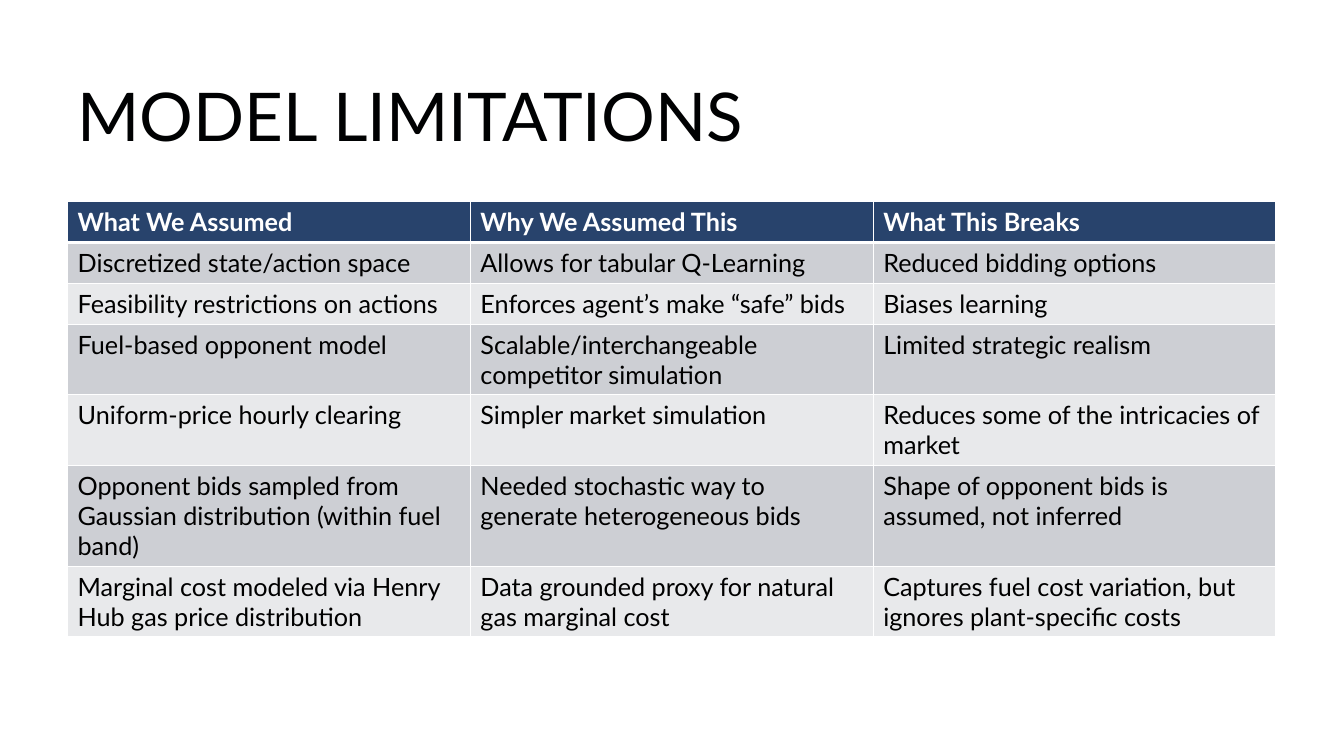
"""Build the model limitations slide with its table of assumptions."""
from dataclasses import dataclass

from lxml import etree
from pptx import Presentation
from pptx import util as u
from pptx.dml import color
from pptx.enum import text
from pptx.oxml import ns

FONT = "Lato"
WHITE, BLACK, NAVY = "FFFFFF", "000000", "28436C"
BANDS = ("CDCFD4", "E8E9EB")
LEFT, WIDTH = 48.24, 863.28
TITLE_TOP, TITLE_HEIGHT, TABLE_TOP = 54, 59.76, 144
LINE_HEIGHTS = {1: 29.2, 2: 50.4, 3: 72}


@dataclass
class Row:
    assumed: str
    why: str
    breaks: str
    lines: int = 1

    def cells(self) -> tuple[str, str, str]:
        return self.assumed, self.why, self.breaks


ROWS = [
    Row("What We Assumed", "Why We Assumed This", "What This Breaks"),
    Row("Discretized state/action space", "Allows for tabular Q-Learning",
        "Reduced bidding options"),
    Row("Feasibility restrictions on actions",
        "Enforces agent’s make “safe” bids", "Biases learning"),
    Row("Fuel-based opponent model",
        "Scalable/interchangeable competitor simulation",
        "Limited strategic realism", 2),
    Row("Uniform-price hourly clearing", "Simpler market simulation",
        "Reduces some of the intricacies of market", 2),
    Row("Opponent bids sampled from Gaussian distribution (within fuel band)",
        "Needed stochastic way to generate heterogeneous bids",
        "Shape of opponent bids is assumed, not inferred", 3),
    Row("Marginal cost modeled via Henry Hub gas price distribution",
        "Data grounded proxy for natural gas marginal cost",
        "Captures fuel cost variation, but ignores plant-specific costs", 2),
]


def rgb(value: str) -> color.RGBColor:
    return color.RGBColor.from_string(value)


def write(tf, content: str, *, size: float = 18, fill: str = BLACK,
          bold: bool = False, spacing: float | None = None) -> None:
    p = tf.paragraphs[0]
    p.line_spacing = spacing
    r = p.add_run()
    r.text = content
    r.font.name = FONT
    r.font.size = u.Pt(size)
    r.font.bold = bold
    r.font.color.rgb = rgb(fill)


def add_borders(cell, top: float, bottom: float) -> None:
    props = cell._tc.get_or_add_tcPr()
    for i, (side, width) in enumerate(
            (("L", 1), ("R", 1), ("T", top), ("B", bottom))):
        ln = etree.Element(ns.qn(f"a:ln{side}"), w=str(u.Pt(width)))
        solid = etree.SubElement(ln, ns.qn("a:solidFill"))
        etree.SubElement(solid, ns.qn("a:srgbClr"), val=WHITE)
        props.insert(i, ln)


def add_title(s) -> None:
    sp = s.shapes.add_textbox(u.Pt(LEFT), u.Pt(TITLE_TOP),
                              u.Pt(WIDTH), u.Pt(TITLE_HEIGHT))
    tf = sp.text_frame
    tf.word_wrap = True
    tf.vertical_anchor = text.MSO_ANCHOR.BOTTOM
    write(tf, "MODEL LIMITATIONS", size=48, fill="000102", spacing=0.8)


def add_limitations(s, rows: list[Row]) -> None:
    heights = [LINE_HEIGHTS[row.lines] for row in rows]
    columns = len(rows[0].cells())
    table = s.shapes.add_table(len(rows), columns, u.Pt(LEFT), u.Pt(TABLE_TOP),
                               u.Pt(WIDTH), u.Pt(sum(heights))).table
    for i, row in enumerate(rows):
        header = i == 0
        table.rows[i].height = u.Pt(heights[i])
        for j, content in enumerate(row.cells()):
            cell = table.cell(i, j)
            cell.fill.solid()
            cell.fill.fore_color.rgb = rgb(NAVY if header else BANDS[(i - 1) % 2])
            add_borders(cell, top=3 if i == 1 else 1, bottom=3 if header else 1)
            write(cell.text_frame, content, bold=header,
                  fill=WHITE if header else BLACK)


def main() -> None:
    prs = Presentation()
    prs.slide_width, prs.slide_height = u.Pt(960), u.Pt(540)
    s = prs.slides.add_slide(prs.slide_layouts[6])
    add_title(s)
    add_limitations(s, ROWS)
    prs.save("out.pptx")


if __name__ == "__main__":
    main()
